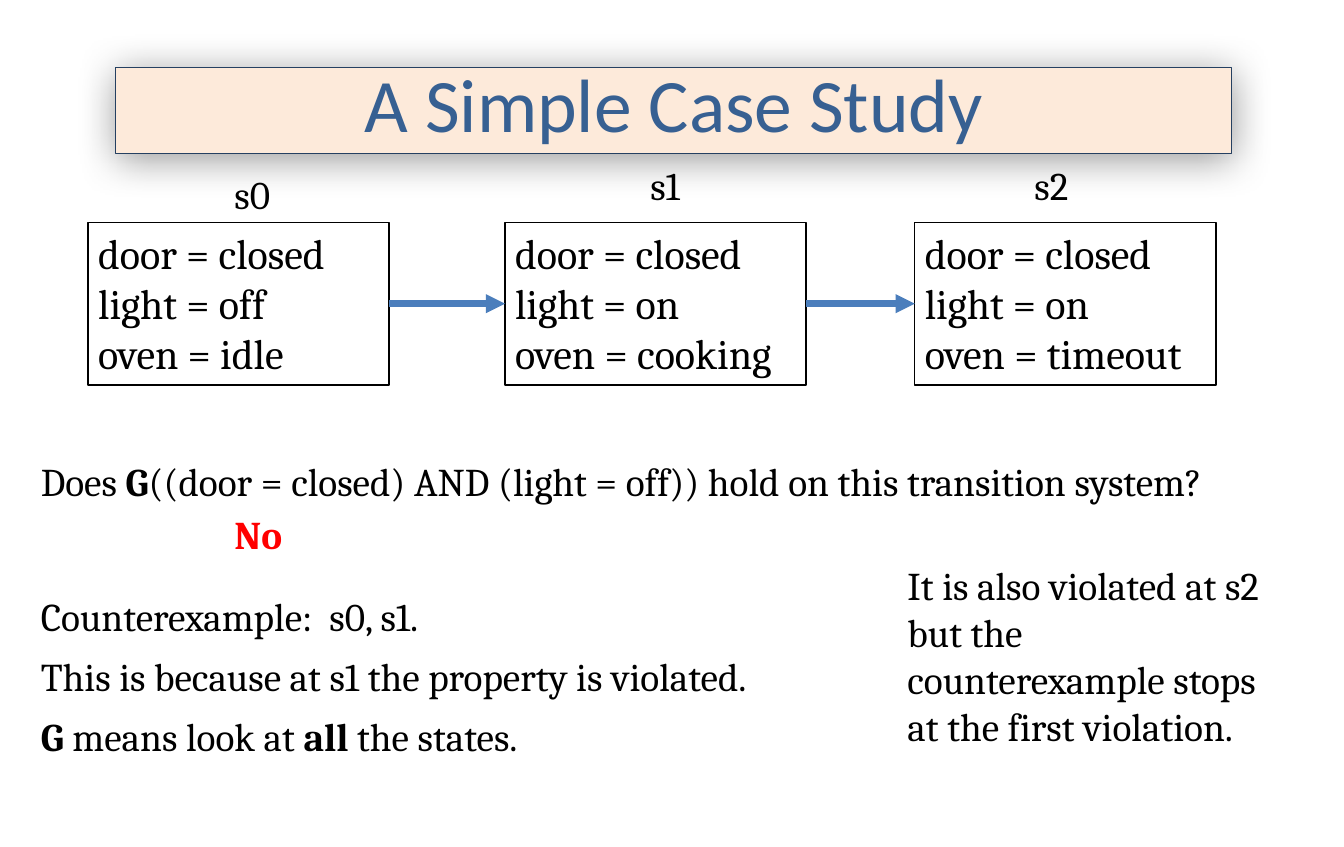
from lxml.etree import SubElement
from pptx import Presentation
from pptx.dml.color import RGBColor
from pptx.enum.shapes import MSO_CONNECTOR, MSO_SHAPE
from pptx.enum.text import MSO_ANCHOR, PP_ALIGN
from pptx.oxml.ns import qn
from pptx.util import Inches, Pt

BLACK = RGBColor(0x00, 0x00, 0x00)
RED = RGBColor(0xFF, 0x00, 0x00)
PEACH = RGBColor(0xFD, 0xEA, 0xDA)
NAVY = RGBColor(0x25, 0x40, 0x61)
TITLE_BLUE = RGBColor(0x37, 0x60, 0x92)
ARROW_BLUE = RGBColor(0x4B, 0x7E, 0xBC)


class Deck:
    body_font = "Cambria"
    title_font = "Calibri"
    text_size = 27.6
    state_size = 29.5

    def __init__(self, width, height):
        self.prs = Presentation()
        self.prs.slide_width = Inches(width)
        self.prs.slide_height = Inches(height)
        self.s = self.prs.slides.add_slide(self.prs.slide_layouts[5])

    def run(self, p, text, size, color=BLACK, bold=False, font=body_font):
        r = p.add_run()
        r.text = text
        r.font.name = font
        r.font.size = Pt(size)
        r.font.bold = bold
        r.font.color.rgb = color

    def title(self, text, x, y, w, h):
        sp = self.s.shapes.title
        sp.left, sp.top, sp.width, sp.height = map(Inches, (x, y, w, h))
        sp.fill.solid()
        sp.fill.fore_color.rgb = PEACH
        sp.line.color.rgb = NAVY
        sp.line.width = Pt(1)
        effects = SubElement(sp.element.spPr, qn("a:effectLst"))
        shadow = SubElement(effects, qn("a:outerShdw"), blurRad=str(Pt(28)),
                            dist=str(Pt(3)), dir="5400000", rotWithShape="0")
        shade = SubElement(shadow, qn("a:srgbClr"), val=str(BLACK))
        SubElement(shade, qn("a:alpha"), val="40000")
        tf = sp.text_frame
        tf.vertical_anchor = MSO_ANCHOR.MIDDLE
        p = tf.paragraphs[0]
        p.alignment = PP_ALIGN.CENTER
        p.line_spacing = 0.8
        self.run(p, text, 53.1, TITLE_BLUE, font=self.title_font)

    def text(self, runs, x, y, w, h=0.56, color=BLACK):
        sp = self.s.shapes.add_textbox(*map(Inches, (x, y, w, h)))
        tf = sp.text_frame
        tf.word_wrap = True
        for words, bold in runs:
            self.run(tf.paragraphs[0], words, self.text_size, color, bold)

    def state(self, lines, x, y, w, h):
        sp = self.s.shapes.add_shape(MSO_SHAPE.RECTANGLE, *map(Inches, (x, y, w, h)))
        sp.shadow.inherit = False
        sp.fill.background()
        sp.line.color.rgb = BLACK
        sp.line.width = Pt(1)
        tf = sp.text_frame
        tf.word_wrap = True
        tf.vertical_anchor = MSO_ANCHOR.TOP
        for i, line in enumerate(lines):
            p = tf.add_paragraph() if i else tf.paragraphs[0]
            p.alignment = PP_ALIGN.LEFT
            self.run(p, line, self.state_size)
        return sp

    def arrow(self, start, end):
        c = self.s.shapes.add_connector(MSO_CONNECTOR.STRAIGHT, 0, 0, 0, 0)
        c.begin_connect(start, 3)
        c.end_connect(end, 1)
        c.line.color.rgb = ARROW_BLUE
        c.line.width = Pt(4.5)
        SubElement(c.line._get_or_add_ln(), qn("a:tailEnd"), type="triangle")
        SubElement(c.element.spPr, qn("a:effectLst"))


def main():
    deck = Deck(13.12, 8.27)
    deck.title("A Simple Case Study", 1.13, 0.66, 10.89, 0.84)

    states = [
        ("s0", 2.19, 1.61, 0.86, "off", "idle"),
        ("s1", 6.25, 1.53, 4.93, "on", "cooking"),
        ("s2", 10, 1.53, 8.93, "on", "timeout"),
    ]
    boxes = []
    for name, name_x, name_y, x, light, oven in states:
        deck.text([(name, False)], name_x, name_y, 0.63)
        lines = ["door = closed", f"light = {light}", f"oven = {oven}"]
        boxes.append(deck.state(lines, x, 2.17, 2.94, 1.59))
    for start, end in zip(boxes, boxes[1:]):
        deck.arrow(start, end)

    deck.text([
        ("Does ", False),
        ("G", True),
        ("((door = closed) AND (light = off)) hold on this transition system?", False),
    ], 0.3, 4.42, 12.35)
    deck.text([("No", True)], 2.19, 4.93, 1.21, color=RED)

    reasons = [
        [("Counterexample:  s0, s1.", False)],
        [("This is because at s1 the property is violated.", False)],
        [("G", True), (" means look at ", False), ("all", True), (" the states.", False)],
    ]
    for i, reason in enumerate(reasons):
        deck.text(reason, 0.3, 5.73 + 0.59 * i, 8.4)

    deck.text([(
        "It is also violated at s2 but the counterexample stops at the first violation.",
        False,
    )], 8.76, 5.43, 3.75, 2.42)
    deck.prs.save("out.pptx")


if __name__ == "__main__":
    main()
